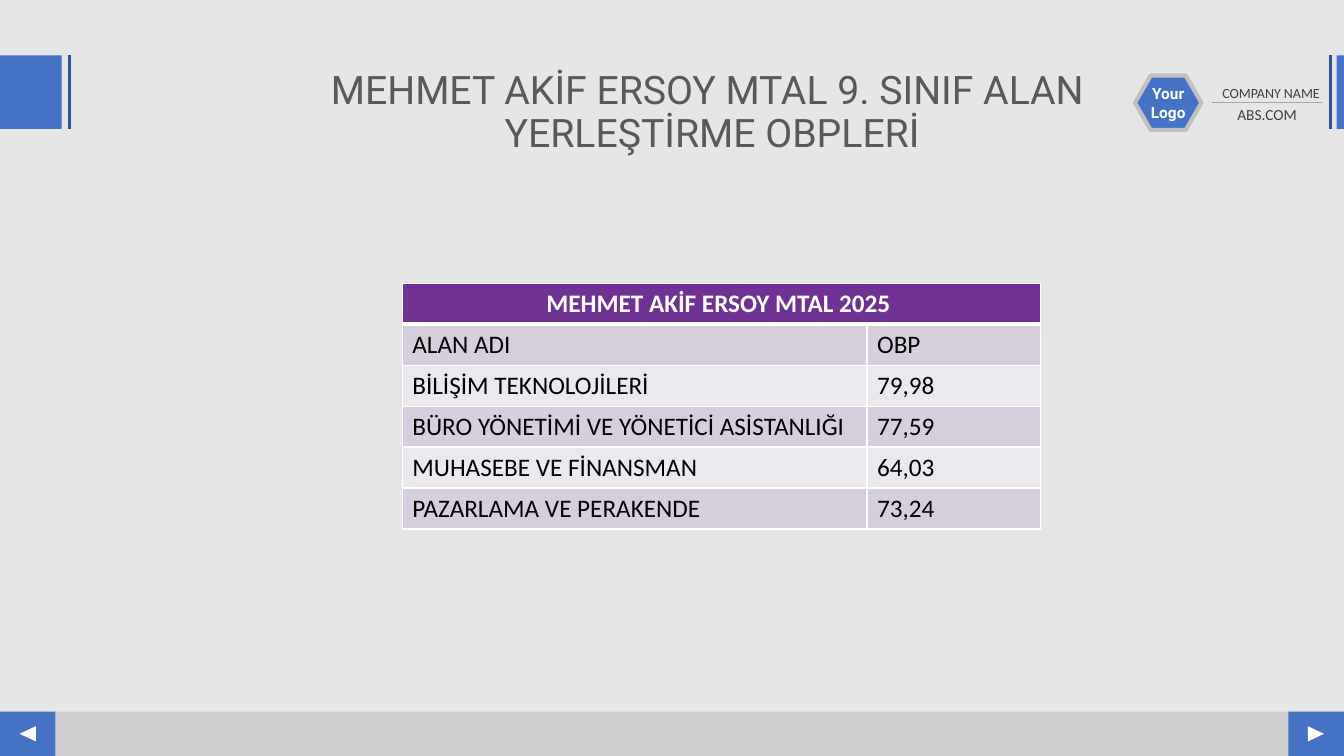
from dataclasses import dataclass

from lxml.etree import SubElement
from pptx import Presentation
from pptx.dml.color import RGBColor
from pptx.enum.shapes import MSO_CONNECTOR as Line, MSO_SHAPE as Shape
from pptx.enum.text import MSO_ANCHOR as Anchor, PP_ALIGN as Align
from pptx.oxml.ns import qn
from pptx.util import Inches, Pt


@dataclass(frozen=True)
class Theme:
    background: str = "E7E6E6"
    footer: str = "D0CECE"
    accent: str = "4472C4"
    accent_dark: str = "2F5597"
    white: str = "FFFFFF"
    black: str = "000000"
    title: str = "595959"
    company: str = "404040"
    rule: str = "A6A6A6"
    badge_edge: str = "C0C0C0"
    header: str = "6F3293"
    bands: tuple = ("D5CEDC", "EBE8EE")
    heading_font: str = "Roboto"
    body_font: str = "Calibri"
    title_size: float = 28
    table_size: float = 18
    label_size: float = 11
    small_size: float = 10


def set_all(target, values):
    for name, value in values.items():
        setattr(target, name, value)


class SlideBuilder:
    """Draws on one slide; every place and length is a percentage of its size."""

    def __init__(self, prs, theme):
        self.prs, self.theme = prs, theme
        self.slide = prs.slides.add_slide(prs.slide_layouts[6])
        self.shapes = self.slide.shapes
        self.paint(self.slide.background.fill, theme.background)

    def x(self, share):
        return round(self.prs.slide_width * share / 100)

    def y(self, share):
        return round(self.prs.slide_height * share / 100)

    def box(self, left, top, width, height):
        return self.x(left), self.y(top), self.x(width), self.y(height)

    def paint(self, fill, color):
        fill.solid()
        fill.fore_color.rgb = RGBColor.from_string(color)

    def put_text(self, tf, text, size, color, font=None, bold=False,
                 align=Align.CENTER, spacing=None):
        p = tf.paragraphs[0]
        set_all(p, {"text": text, "alignment": align, "line_spacing": spacing})
        for r in p.runs:
            set_all(r.font, {"size": Pt(size), "bold": bold,
                             "name": font or self.theme.body_font})
            r.font.color.rgb = RGBColor.from_string(color)

    def shape(self, kind, place, color, rotation=0, edge=None, edge_width=0):
        sp = self.shapes.add_shape(kind, *self.box(*place))
        sp.shadow.inherit = False
        sp.rotation = rotation
        self.paint(sp.fill, color)
        if edge:
            self.paint(sp.line.fill, edge)
            sp.line.width = Pt(edge_width)
        else:
            sp.line.fill.background()
        return sp

    def line(self, start, end, color, width):
        (x1, y1), (x2, y2) = start, end
        ln = self.shapes.add_connector(Line.STRAIGHT, self.x(x1), self.y(y1),
                                       self.x(x2), self.y(y2))
        self.paint(ln.line.fill, color)
        ln.line.width = Pt(width)
        SubElement(ln._element.spPr, qn("a:effectLst"))

    def text(self, place, text, size, color, wrap=False, anchor=Anchor.TOP, **style):
        tf = self.shapes.add_textbox(*self.box(*place)).text_frame
        set_all(tf, {"word_wrap": wrap, "vertical_anchor": anchor})
        self.put_text(tf, text, size, color, **style)

    def border(self, cell, widths):
        """Draws white borders; must run before the cell is filled."""
        for side, width in widths.items():
            ln = SubElement(cell._tc.get_or_add_tcPr(), qn(f"a:ln{side}"),
                            w=str(Pt(width)))
            fill = SubElement(ln, qn("a:solidFill"))
            SubElement(fill, qn("a:srgbClr"), val=self.theme.white)

    def table(self, left, top, widths, row_height, heading, rows):
        th = self.theme
        count = len(rows) + 1
        place = self.box(left, top, sum(widths), row_height * count)
        table = self.shapes.add_table(count, len(widths), *place).table
        for column, width in zip(table.columns, widths):
            column.width = self.x(width)
        for row in table.rows:
            row.height = self.y(row_height)
        table.cell(0, 0).merge(table.cell(0, len(widths) - 1))
        for i, values in enumerate([(heading, ""), *rows]):
            for j, value in enumerate(values):
                cell = table.cell(i, j)
                self.border(cell, {"L": 1, "R": 1, "T": 3 if i == 1 else 1,
                                   "B": 3 if i == 0 else 1})
                self.paint(cell.fill, th.bands[(i - 1) % 2] if i else th.header)
                if value:
                    self.put_text(cell.text_frame, value, th.table_size,
                                  th.black if i else th.white, bold=i == 0,
                                  align=Align.LEFT if i else Align.CENTER)


def add_footer(s, th):
    top, height, button = 94.13, 5.87, 4.13
    s.shape(Shape.RECTANGLE, (0, top, 100, height), th.footer)
    for left, arrow_left, rotation in ((0, 1.5, 270), (100 - button, 97.35, 90)):
        s.shape(Shape.RECTANGLE, (left, top, button, height), th.accent)
        s.shape(Shape.ISOSCELES_TRIANGLE, (arrow_left, 96, 1.13, 2.13),
                th.white, rotation)


def add_side_marks(s, th):
    top, height = 7.33, 9.73
    for left, width, line_x in ((0, 4.58, 5.18), (99.45, 0.55, 99)):
        s.shape(Shape.RECTANGLE, (left, top, width, height), th.accent)
        s.line((line_x, top), (line_x, top + height), th.accent_dark, 2.25)


def add_company(s, th):
    left, width = 90.15, 8.25
    s.text((left, 10.53, 8.85, 3.6), "COMPANY NAME", th.small_size, th.company)
    s.text((left, 13.2, width, 3.87), "ABS.COM", th.label_size, th.company)
    s.line((left, 13.6), (left + width, 13.6), th.rule, 0.5)
    badge = s.shape(Shape.HEXAGON, (84.45, 10, 4.95, 7.2), th.accent,
                    edge=th.badge_edge, edge_width=3)
    badge.adjustments[0] = 0.289
    tf = badge.text_frame
    set_all(tf, {"word_wrap": False, "vertical_anchor": Anchor.MIDDLE,
                 "margin_left": 0, "margin_right": 0,
                 "margin_top": 0, "margin_bottom": 0})
    s.put_text(tf, "Your\vLogo", th.label_size, th.white, th.heading_font, bold=True)


def main():
    prs = Presentation()
    set_all(prs, {"slide_width": Inches(13.33), "slide_height": Inches(7.5)})
    th = Theme()
    s = SlideBuilder(prs, th)
    add_footer(s, th)
    add_side_marks(s, th)
    add_company(s, th)
    s.text((5.93, 9.2, 94.1, 11.6),
           "MEHMET AKİF ERSOY MTAL 9. SINIF ALAN \vYERLEŞTİRME OBPLERİ",
           th.title_size, th.title, wrap=True, anchor=Anchor.MIDDLE,
           font=th.heading_font, spacing=0.9)
    s.table(29.93, 37.47, (34.58, 12.9), 5.42, "MEHMET AKİF ERSOY MTAL 2025 ", [
        ("ALAN ADI", "OBP"),
        ("BİLİŞİM TEKNOLOJİLERİ", "79,98"),
        ("BÜRO YÖNETİMİ VE YÖNETİCİ ASİSTANLIĞI", "77,59"),
        ("MUHASEBE VE FİNANSMAN", "64,03"),
        ("PAZARLAMA VE PERAKENDE", "73,24"),
    ])
    prs.save("out.pptx")


if __name__ == "__main__":
    main()
